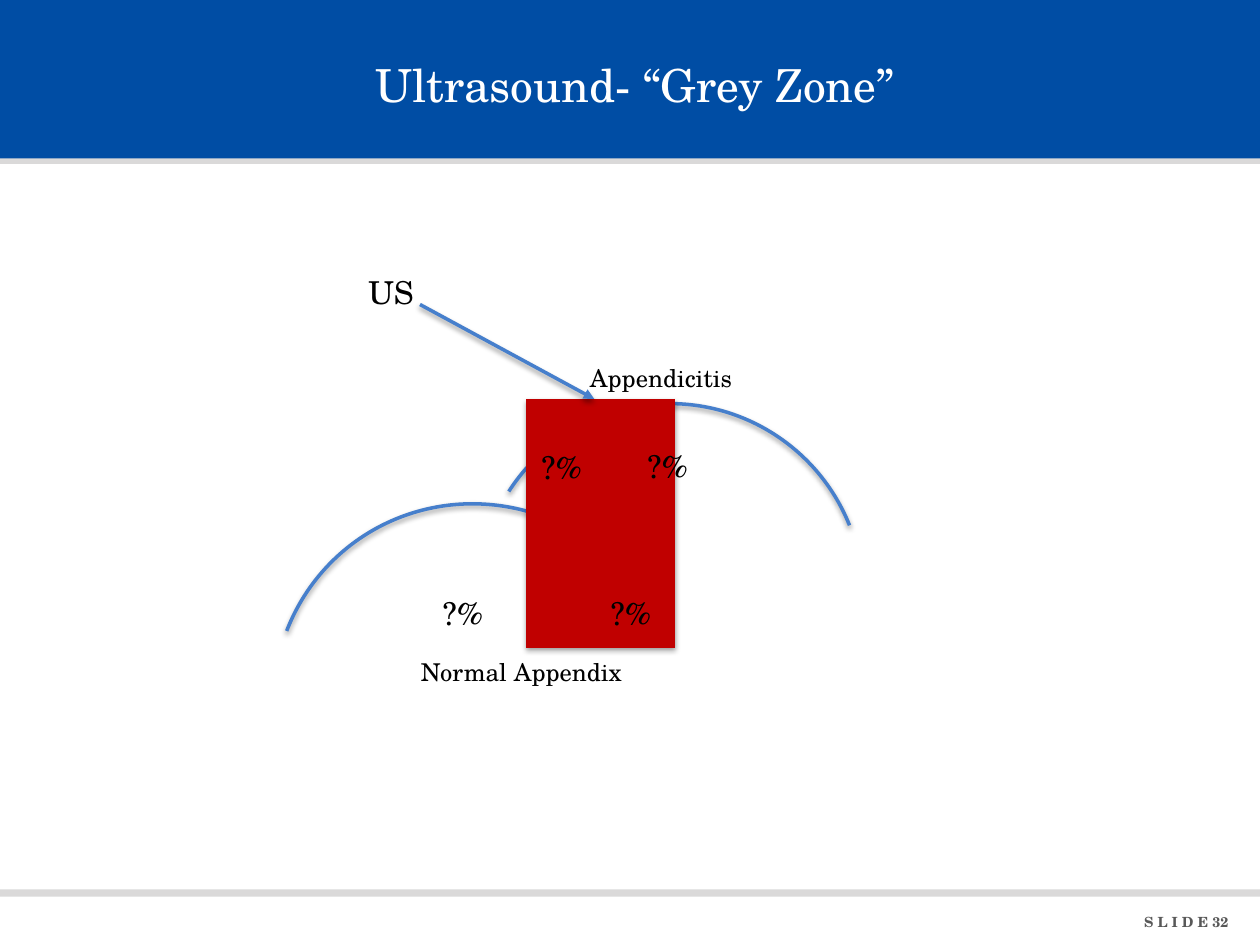
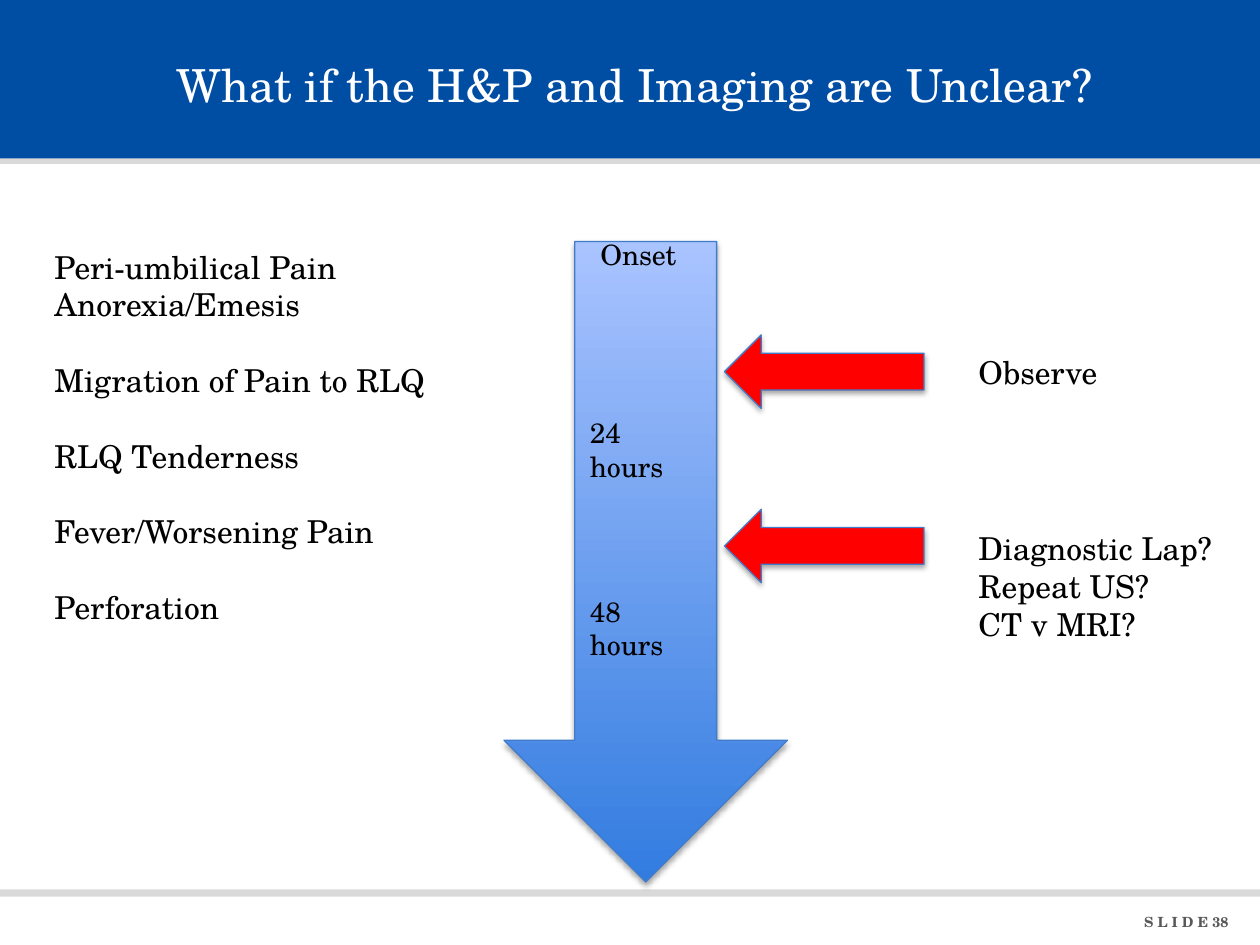
"""Build two slides on unclear appendicitis imaging, on a grid of 120 columns by 90 rows."""
from lxml import etree
from pptx import Presentation
from pptx.dml.color import RGBColor
from pptx.enum.shapes import MSO_CONNECTOR, MSO_SHAPE
from pptx.enum.text import MSO_ANCHOR, PP_ALIGN
from pptx.oxml.ns import qn
from pptx.util import Inches, Pt

RECTANGLE, ARC = MSO_SHAPE.RECTANGLE, MSO_SHAPE.ARC
DOWN_ARROW, LEFT_ARROW = MSO_SHAPE.DOWN_ARROW, MSO_SHAPE.LEFT_ARROW
STRAIGHT = MSO_CONNECTOR.STRAIGHT
LEFT, CENTER, RIGHT = PP_ALIGN.LEFT, PP_ALIGN.CENTER, PP_ALIGN.RIGHT
TOP, MIDDLE = MSO_ANCHOR.TOP, MSO_ANCHOR.MIDDLE

FONT = "TeX Gyre Schola"
COLUMNS, ROWS = 120, 90
COLORS = {
    "band": "004DA4", "rule": "DAD9D9", "footer": "585858", "title": "FFFFFF",
    "text": "000000", "curve": "467FCC", "zone": "C00000", "outline": "417CCB",
    "action": "FF0000", "late": "327CE0", "early": "A9C3FF", "shadow": "000000",
}


def grid(*cells):
    """Turn grid cells into lengths; a cell is a twelfth of an inch."""
    return [Inches(cell / 12) for cell in cells]


def color(name):
    """Look up a named colour."""
    return RGBColor.from_string(COLORS[name])


def add_shadow(item, opacity, distance):
    """Give a shape or connector a soft shadow that falls straight down."""
    effects = etree.SubElement(item._element.spPr, qn("a:effectLst"))
    shadow = etree.SubElement(
        effects, qn("a:outerShdw"), blurRad=str(Pt(3.1)), dist=str(Pt(distance)),
        dir="5400000", rotWithShape="0")
    tint = etree.SubElement(shadow, qn("a:srgbClr"), val=COLORS["shadow"])
    etree.SubElement(tint, qn("a:alpha"), val=str(opacity * 1000))


def add_text(page, text, left, top, width, height=4.8, size=18, fill="text",
             bold=False, align=LEFT, anchor=TOP, gaps=()):
    """Write one paragraph per line, with a line's space before those in gaps."""
    box = page.shapes.add_textbox(*grid(left, top, width, height))
    frame = box.text_frame
    frame.word_wrap = True
    frame.vertical_anchor = anchor
    for index, line in enumerate(text.split("\n")):
        para = frame.paragraphs[0] if index == 0 else frame.add_paragraph()
        para.alignment = align
        if index in gaps:
            para.space_before = Pt(size * 1.2)
        span = para.add_run()
        span.text = line
        span.font.name, span.font.size, span.font.bold = FONT, Pt(size), bold
        span.font.color.rgb = color(fill)


def add_bar(page, top, height, fill):
    """Draw a plain bar across the whole slide."""
    bar = page.shapes.add_shape(RECTANGLE, *grid(0, top, COLUMNS, height))
    bar.shadow.inherit = False
    bar.fill.solid()
    bar.fill.fore_color.rgb = color(fill)
    bar.line.fill.background()


def add_curve(page, left, top, width, height, start, end):
    """Draw a tilted bell-like arc between two angles in degrees."""
    curve = page.shapes.add_shape(ARC, *grid(left, top, width, height))
    curve.rotation = 320.2
    for index, angle in enumerate((start, end)):
        curve.adjustments[index] = angle * 0.6
    curve.fill.background()
    curve.line.color.rgb = color("curve")
    curve.line.width = Pt(2)
    add_shadow(curve, 38, 1.6)


def add_line(page, start, end, fill, width, arrow=False):
    """Draw a straight line, with an arrowhead at its end if asked."""
    line = page.shapes.add_connector(STRAIGHT, *grid(*start, *end))
    line.line.color.rgb = color(fill)
    line.line.width = Pt(width)
    if arrow:
        etree.SubElement(line.line._get_or_add_ln(), qn("a:tailEnd"), type="triangle")
    add_shadow(line, 38, 1.6)


def add_block_arrow(page, kind, left, top, width, height, fills):
    """Draw a block arrow in one colour, or in a gradient from bottom to top."""
    arrow = page.shapes.add_shape(kind, *grid(left, top, width, height))
    if len(fills) == 1:
        arrow.fill.solid()
        arrow.fill.fore_color.rgb = color(fills[0])
    else:
        arrow.fill.gradient()
        arrow.fill.gradient_angle = 90
        for stop, fill in zip(arrow.fill.gradient_stops, fills):
            stop.color.rgb = color(fill)
    arrow.line.color.rgb = color("outline")
    arrow.line.width = Pt(0.75)
    add_shadow(arrow, 35, 1.8)


def add_page(deck, title, number):
    """Add a slide with the title band, footer rule and slide number."""
    page = deck.slides.add_slide(deck.slide_layouts[6])
    add_bar(page, 12.6, 3, "rule")
    add_bar(page, 0, 15.1, "band")
    add_text(page, f"S L I D E {number}", 101.2, 86.4, 17, 2.8, size=8,
             fill="footer", bold=True, align=RIGHT)
    add_bar(page, 84.7, 0.7, "rule")
    add_text(page, title, 7.1, 2, 106.8, 12, size=26, fill="title",
             align=CENTER, anchor=MIDDLE)
    return page


def build_grey_zone(deck):
    """Show the overlap of normal and inflamed appendix on ultrasound."""
    page = add_page(deck, "Ultrasound- “Grey Zone”", 32)
    add_curve(page, 26.2, 47.8, 38.5, 39.4, 242, 19.8)
    add_curve(page, 45.6, 38.4, 36.6, 36.8, 252.7, 18.1)
    add_text(page, "Normal Appendix", 38.9, 62, 25.8, size=14)
    add_line(page, (57.2, 38), (57.2, 61.7), "zone", 85.5)
    for left, top in ((60.5, 42), (50.4, 42.1), (41, 56), (57, 56)):
        add_text(page, "?%", left, top, 12)
    add_line(page, (40, 29), (56.6, 38), "curve", 2, arrow=True)
    add_text(page, "US", 33.9, 25.4, 8.4)
    add_text(page, "Appendicitis", 55, 34, 25.8, size=14)


def build_timeline(deck):
    """Set symptoms and actions beside a 48-hour timeline."""
    page = add_page(deck, "What if the H&P and Imaging are Unclear?", 38)
    symptoms = ("Peri-umbilical Pain\nAnorexia/Emesis\nMigration of Pain to RLQ\n"
                "RLQ Tenderness\nFever/Worsening Pain\nPerforation")
    add_text(page, symptoms, 4, 23, 100, 48.5, gaps=range(2, 6))
    add_block_arrow(page, DOWN_ARROW, 48, 23, 27, 61, ("late", "early"))
    for label, left, top in (("24 hours", 55, 39), ("48 hours", 55, 56),
                             ("Onset", 56, 22)):
        add_text(page, label, left, top, 13, size=16)
    for top in (31.9, 48.5):
        add_block_arrow(page, LEFT_ARROW, 69, top, 19, 7, ("action",))
    add_text(page, "Observe", 92, 33, 21.8)
    add_text(page, "Diagnostic Lap?\nRepeat US?\nCT v MRI?", 92, 49.8, 27, 12.1)


def main():
    """Build and save the deck."""
    deck = Presentation()
    deck.slide_width, deck.slide_height = grid(COLUMNS, ROWS)
    build_grey_zone(deck)
    build_timeline(deck)
    deck.save("out.pptx")


if __name__ == "__main__":
    main()
